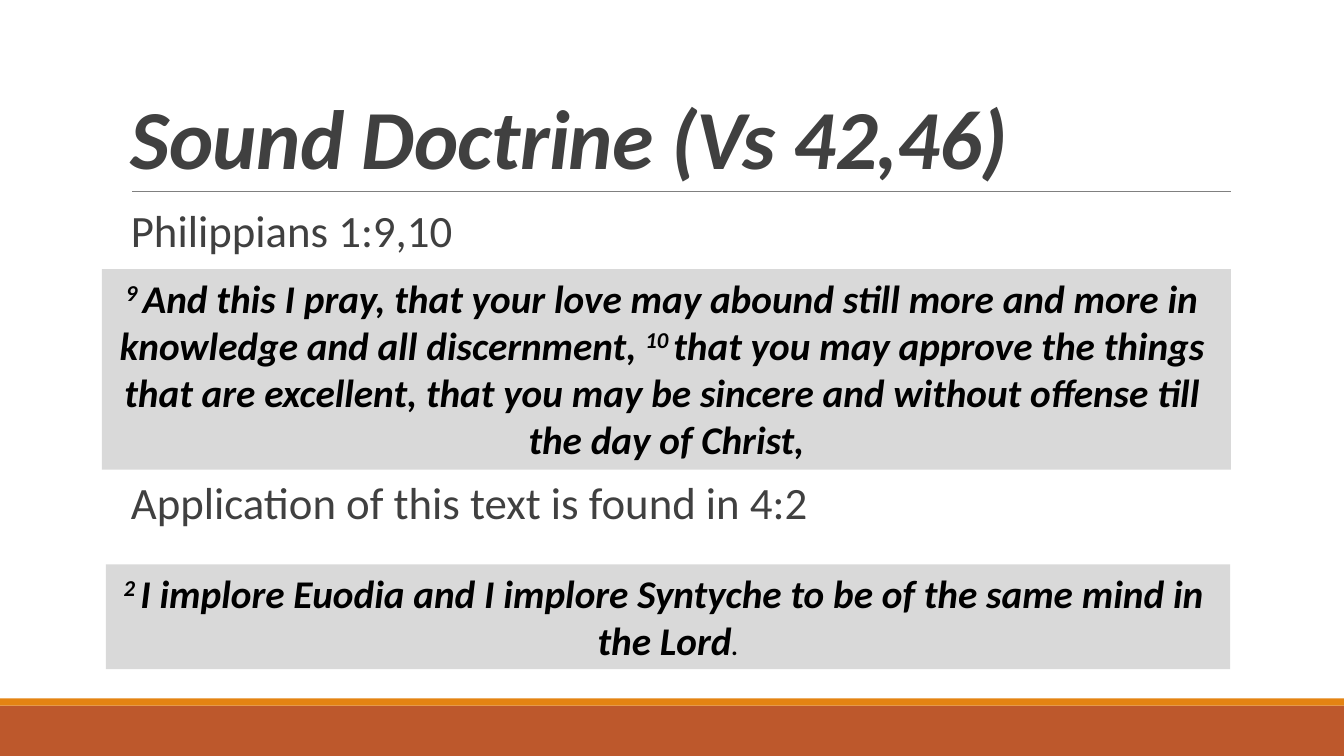
import pptx
import pptx.dml.color
import pptx.enum.shapes
import pptx.enum.text
import pptx.util
from lxml import etree
from pptx.util import Inches

FONT = "Calibri"
COLORS = {
    "footer": "BD582C",
    "accent": "E48312",
    "rule": "808080",
    "heading": "404040",
    "panel": "D9D9D9",
    "verse": "000000",
}
PRAYER = [
    [("9 ", "number"), ("And this I pray, that your love may abound still more and more in ", "verse")],
    [("knowledge and all discernment, ", "verse"), ("10 ", "number"),
     ("that you may approve the things ", "verse")],
    [("that are excellent, that you may be sincere and without offense till ", "verse")],
    [("the day of Christ,", "verse")],
]
APPEAL = [
    [("2 ", "number"), ("I implore Euodia and I implore Syntyche to be of the same mind in ", "verse")],
    [("the Lord", "verse"), (".", "stop")],
]


def rgb(name):
    return pptx.dml.color.RGBColor.from_string(COLORS[name])


def style_run(run, size, color, emphasis=False):
    run.font.name = FONT
    run.font.size = pptx.util.Pt(size)
    run.font.color.rgb = rgb(color)
    run.font.bold = emphasis
    run.font.italic = emphasis


def add_bar(slide, left, top, width, height, color):
    bar = slide.shapes.add_shape(
        pptx.enum.shapes.MSO_SHAPE.RECTANGLE,
        Inches(left), Inches(top), Inches(width), Inches(height))
    bar.shadow.inherit = False
    bar.fill.solid()
    bar.fill.fore_color.rgb = rgb(color)
    bar.line.fill.background()
    return bar


def add_rule(slide, left, right, y):
    rule = slide.shapes.add_connector(
        pptx.enum.shapes.MSO_CONNECTOR.STRAIGHT,
        Inches(left), Inches(y), Inches(right), Inches(y))
    rule.line.color.rgb = rgb("rule")
    rule.line.width = pptx.util.Pt(0.5)
    etree.SubElement(rule._element.spPr, pptx.oxml.ns.qn("a:effectLst"))


def add_line_of_text(slide, text, top, height, size, spacing, anchor, emphasis=False):
    box = slide.shapes.add_textbox(Inches(1.2), Inches(top), Inches(11), Inches(height))
    frame = box.text_frame
    frame.word_wrap = True
    frame.vertical_anchor = anchor
    frame.text = text
    paragraph = frame.paragraphs[0]
    paragraph.line_spacing = spacing
    run = paragraph.runs[0]
    style_run(run, size, "heading", emphasis)
    return run


def add_verse_panel(slide, left, top, width, height, lines):
    panel = add_bar(slide, left, top, width, height, "panel")
    frame = panel.text_frame
    frame.word_wrap = False
    frame.vertical_anchor = pptx.enum.text.MSO_ANCHOR.TOP
    for index, line in enumerate(lines):
        paragraph = frame.add_paragraph() if index else frame.paragraphs[0]
        paragraph.alignment = pptx.enum.text.PP_ALIGN.CENTER
        for text, role in line:
            run = paragraph.add_run()
            run.text = text
            style_run(run, 18 if role == "stop" else 28, "verse", True)
            if role == "number":
                run.font._element.set("baseline", "30000")


def main():
    presentation = pptx.Presentation()
    presentation.slide_width = Inches(13.33)
    presentation.slide_height = Inches(7.5)
    slide = presentation.slides.add_slide(presentation.slide_layouts[6])
    anchors = pptx.enum.text.MSO_ANCHOR

    add_bar(slide, 0, 7, 13.33, 0.5, "footer")
    add_bar(slide, 0, 6.93, 13.33, 0.07, "accent")
    add_rule(slide, 1.31, 12.21, 1.9)
    title = add_line_of_text(slide, "Sound Doctrine (Vs 42,46)", 0.31, 1.59, 60, 0.85,
                             anchors.BOTTOM, True)
    title.font._element.set("spc", "-50")
    add_line_of_text(slide, "Philippians 1:9,10", 2.02, 0.6, 32, 0.9, anchors.TOP)
    add_line_of_text(slide, "Application of this text is found in 4:2", 4.72, 0.6, 32, 0.9,
                     anchors.TOP)
    add_verse_panel(slide, 1.01, 2.67, 11.2, 1.99, PRAYER)
    add_verse_panel(slide, 1.05, 5.6, 11.15, 1.04, APPEAL)

    presentation.save("out.pptx")


if __name__ == "__main__":
    main()
